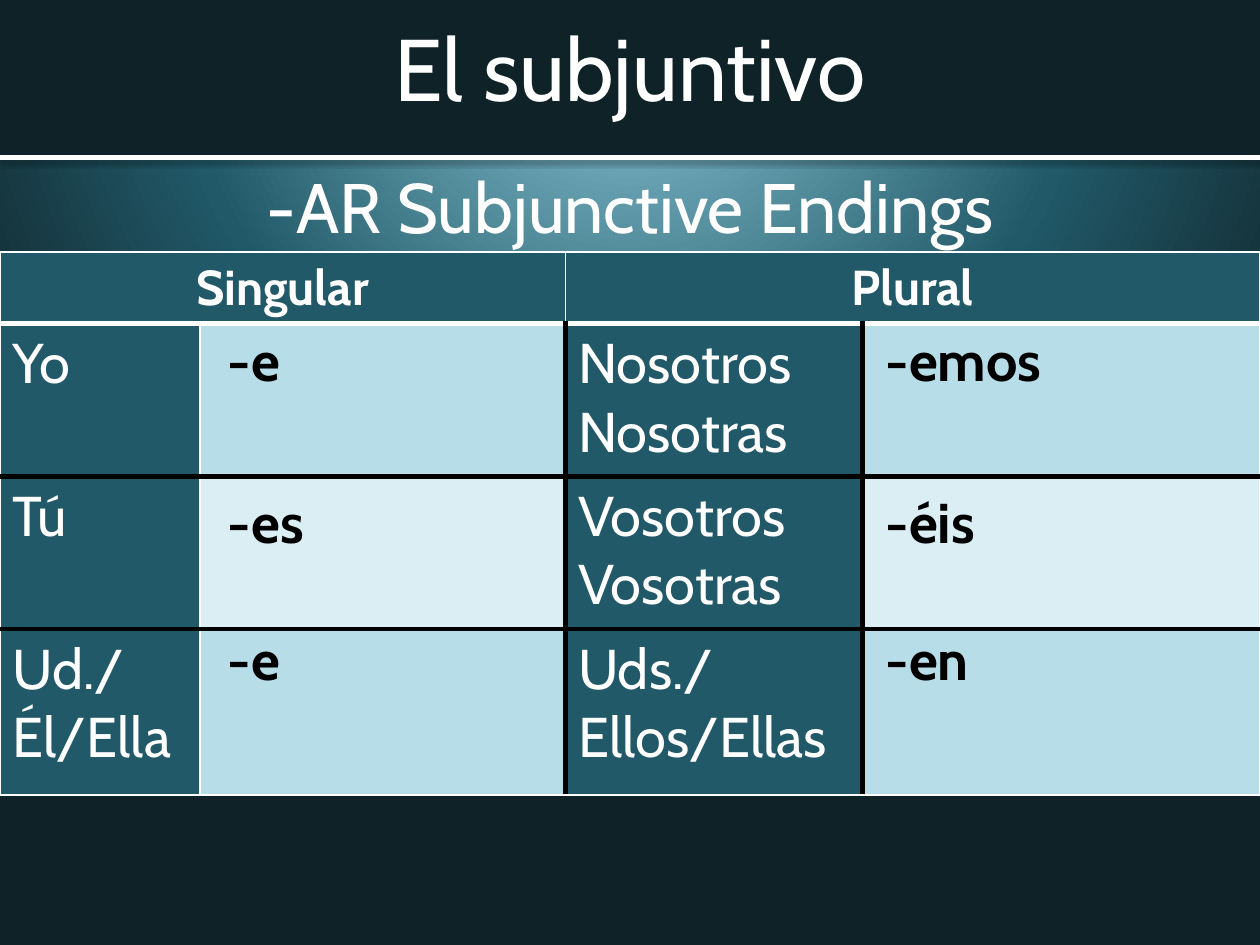
from dataclasses import dataclass

from lxml import etree
from pptx import Presentation
from pptx.dml.color import RGBColor
from pptx.enum.shapes import MSO_CONNECTOR as Connector, MSO_SHAPE as Shape
from pptx.enum.text import MSO_ANCHOR as Anchor, PP_ALIGN as Align
from pptx.oxml import parse_xml
from pptx.oxml.ns import nsdecls, qn
from pptx.util import Cm, Pt


@dataclass(frozen=True)
class Theme:
    font: str = "Cabin"
    white: str = "FFFFFF"
    black: str = "000000"
    night: str = "0F2227"
    teal: str = "215968"
    sky: str = "93CDDD"
    pale: str = "B7DEE8"
    paler: str = "DBEEF4"
    title: int = 50
    subtitle: int = 40
    body: int = 32
    heading: int = 28
    thin: int = 1
    thick: int = 3


THEME = Theme()
PLAIN_STYLE = "{2D5ABB26-0587-4C30-8999-92F81FD0307C}"
WIDTH, HEIGHT = 25.4, 19.05
BAND_HEIGHT = 3.18
TABLE_TOP = 5.08
COLUMNS = [4.03, 7.37, 5.99, 8.01]
ROWS = [1.44, 3.08, 3.08, 3.35]
HEADINGS = ["Singular", "Plural"]
PRONOUNS = [
    (["Yo"], ["Nosotros", "Nosotras"]),
    (["Tú"], ["Vosotros", "Vosotras"]),
    (["Ud./Él/Ella"], ["Uds./Ellos/Ellas"]),
]
ENDINGS = [
    (6.48, "-e", "-emos"),
    (9.73, "-es", "-éis"),
    (12.5, "-e", "-en"),
]
ENDING_LEFTS = [4.34, 17.6]
ENDING_SIZE = (6.2, 1.6)


def write(frame, lines, size, color, align=Align.LEFT, bold=False):
    style = {"name": THEME.font, "size": Pt(size), "bold": bold}
    for index, line in enumerate(lines):
        paragraph = frame.add_paragraph() if index else frame.paragraphs[0]
        paragraph.alignment = align
        run = paragraph.add_run()
        run.text = line
        for key, value in style.items():
            setattr(run.font, key, value)
        run.font.color.rgb = RGBColor.from_string(color)


def paint_background(slide):
    stops = "".join(
        f'<a:gs pos="{position * 1000}"><a:srgbClr val="{color}"/></a:gs>'
        for position, color in [(0, THEME.sky), (58, THEME.teal), (100, THEME.night)]
    )
    fill = slide.background.fill
    fill.solid()
    properties = slide._element.cSld.find(qn("p:bg")).find(qn("p:bgPr"))
    properties.replace(properties[0], parse_xml(
        f'<a:gradFill {nsdecls("a")} rotWithShape="1"><a:gsLst>{stops}</a:gsLst>'
        '<a:path path="circle"><a:fillToRect l="50000" t="-80000" r="50000" '
        'b="180000"/></a:path></a:gradFill>'
    ))


def add_band(slide):
    band = slide.shapes.add_shape(Shape.RECTANGLE, 0, 0, Cm(WIDTH), Cm(BAND_HEIGHT))
    band.shadow.inherit = False
    band.fill.solid()
    band.fill.fore_color.rgb = RGBColor.from_string(THEME.night)
    band.line.fill.background()


def add_rule(slide):
    rule = slide.shapes.add_connector(
        Connector.STRAIGHT, 0, Cm(BAND_HEIGHT), Cm(WIDTH), Cm(BAND_HEIGHT))
    rule.line.color.rgb = RGBColor.from_string(THEME.white)
    rule.line.width = Pt(THEME.thick)
    rule._element.spPr.append(parse_xml(
        f'<a:effectLst {nsdecls("a")}><a:outerShdw blurRad="{Pt(3.1)}" '
        f'dist="{Pt(1.6)}" dir="5400000"><a:srgbClr val="{THEME.black}">'
        '<a:alpha val="38000"/></a:srgbClr></a:outerShdw></a:effectLst>'
    ))


def add_caption(slide, text, top, height, size, anchor):
    caption = slide.shapes.add_textbox(0, Cm(top), Cm(WIDTH), Cm(height))
    for key, value in {"word_wrap": True, "vertical_anchor": anchor}.items():
        setattr(caption.text_frame, key, value)
    write(caption.text_frame, [text], size, THEME.white, Align.CENTER)


def add_plain_table(slide, left, top, columns, rows):
    table = slide.shapes.add_table(
        len(rows), len(columns), Cm(left), Cm(top), Cm(sum(columns)), Cm(sum(rows))
    ).table
    for key in ("first_row", "horz_banding"):
        setattr(table, key, False)
    table._tbl.tblPr.find(qn("a:tableStyleId")).text = PLAIN_STYLE
    for column, width in zip(table.columns, columns):
        column.width = Cm(width)
    for row, height in zip(table.rows, rows):
        row.height = Cm(height)
    return table


def fill_cell(cell, color):
    cell.fill.solid()
    cell.fill.fore_color.rgb = RGBColor.from_string(color)


def set_borders(cell, borders):
    properties = cell._tc.get_or_add_tcPr()
    for index, (side, (color, width)) in enumerate(borders.items()):
        border = etree.Element(qn(f"a:ln{side}"), w=str(Pt(width)))
        solid = etree.SubElement(border, qn("a:solidFill"))
        etree.SubElement(solid, qn("a:srgbClr"), val=color)
        properties.insert(index, border)


def cell_borders(row, column):
    edge = (THEME.white, THEME.thin)
    divider = (THEME.black, THEME.thick)
    under_heading = (THEME.white, THEME.thick)
    across = [edge, under_heading, divider, divider, edge]
    down = [edge, edge, divider, divider, edge] if row else [edge] * 5
    return {"L": down[column], "R": down[column + 1],
            "T": across[row], "B": across[row + 1]}


def add_conjugation_table(slide):
    table = add_plain_table(slide, 0, TABLE_TOP, COLUMNS, ROWS)
    for row in range(len(ROWS)):
        for column in range(len(COLUMNS)):
            is_ending = row and column % 2
            ending_fill = THEME.pale if row % 2 else THEME.paler
            cell = table.cell(row, column)
            fill_cell(cell, ending_fill if is_ending else THEME.teal)
            set_borders(cell, cell_borders(row, column))
    for half, heading in enumerate(HEADINGS):
        cell = table.cell(0, 2 * half)
        cell.merge(table.cell(0, 2 * half + 1))
        write(cell.text_frame, [heading], THEME.heading, THEME.white, Align.CENTER, True)
        for row, pronouns in enumerate(PRONOUNS, 1):
            write(table.cell(row, 2 * half).text_frame, pronouns[half],
                  THEME.body, THEME.white)


def add_ending(slide, left, top, ending):
    width, height = ENDING_SIZE
    cell = add_plain_table(slide, left, top, [width], [height]).cell(0, 0)
    cell.fill.background()
    write(cell.text_frame, [ending], THEME.body, THEME.black, bold=True)


def main():
    deck = Presentation()
    deck.slide_width, deck.slide_height = Cm(WIDTH), Cm(HEIGHT)
    slide = deck.slides.add_slide(deck.slide_layouts[6])
    paint_background(slide)
    add_band(slide)
    add_caption(slide, "-AR Subjunctive Endings", BAND_HEIGHT, 13.2,
                THEME.subtitle, Anchor.TOP)
    add_rule(slide)
    add_caption(slide, "El subjuntivo", 0, 2.7, THEME.title, Anchor.MIDDLE)
    add_conjugation_table(slide)
    for left, column in zip(ENDING_LEFTS, (1, 2)):
        for ending in ENDINGS:
            add_ending(slide, left, ending[0], ending[column])
    deck.save("out.pptx")


if __name__ == "__main__":
    main()
